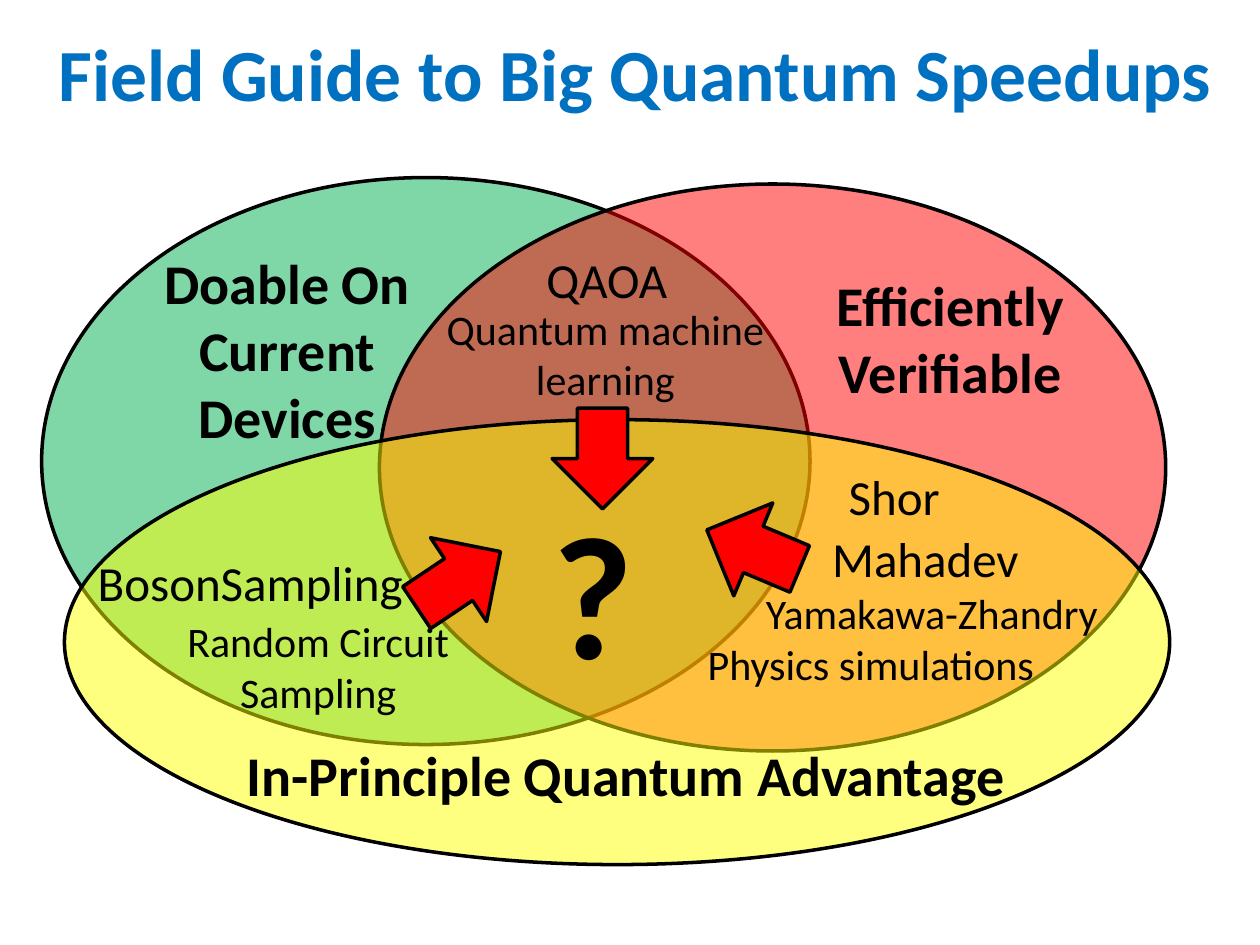
"""Build a Venn diagram slide of quantum speedups by what makes each one practical."""
from dataclasses import dataclass

from lxml.etree import SubElement
from pptx import Presentation
from pptx.dml.color import RGBColor
from pptx.enum.shapes import MSO_SHAPE
from pptx.enum.text import MSO_ANCHOR, MSO_AUTO_SIZE, PP_ALIGN
from pptx.oxml.ns import qn
from pptx.shapes.autoshape import Shape
from pptx.slide import Slide
from pptx.util import Cm, Pt


@dataclass(frozen=True)
class Theme:
    font: str = "Calibri"
    title_color: RGBColor = RGBColor(0x00, 0x70, 0xC0)
    ink: RGBColor = RGBColor(0x00, 0x00, 0x00)
    doable: RGBColor = RGBColor(0x00, 0xB0, 0x50)
    verifiable: RGBColor = RGBColor(0xFF, 0x00, 0x00)
    advantage: RGBColor = RGBColor(0xFF, 0xFF, 0x00)
    arrow: RGBColor = RGBColor(0xFF, 0x00, 0x00)
    title_size: int = 42
    heading_size: int = 32
    example_size: int = 28
    detail_size: int = 24
    question_size: int = 100
    outline: int = 2
    opacity: int = 50


THEME = Theme()


@dataclass(frozen=True)
class Region:
    left: float
    top: float
    width: float
    height: float
    color: RGBColor


@dataclass(frozen=True)
class Label:
    text: str
    left: float
    top: float
    width: float
    height: float
    size: int
    bold: bool = False
    color: RGBColor = THEME.ink


@dataclass(frozen=True)
class Arrow:
    left: float
    top: float
    rotation: float
    side: float = 2.03


TITLE = Label("Field Guide to Big Quantum Speedups", 0.64, 0.28, 24.33, 2.36,
              THEME.title_size, True, THEME.title_color)
REGIONS = [
    Region(0.84, 3.58, 15.49, 11.43, THEME.doable),
    Region(7.65, 3.71, 15.85, 11.43, THEME.verifiable),
    Region(1.3, 8.46, 22.28, 8.97, THEME.advantage),
]
LABELS = [
    Label("Doable On Current Devices", 2.08, 4.88, 7.42, 4.37, THEME.heading_size, True),
    Label("Efficiently\nVerifiable", 16.36, 5.33, 5.59, 3, THEME.heading_size, True),
    Label("In-Principle Quantum Advantage", 4.7, 14.81, 15.85, 1.63, THEME.heading_size, True),
    Label("Mahadev", 16.1, 10.52, 5.11, 1.45, THEME.example_size),
    Label("Shor", 15.47, 9.27, 5.11, 1.45, THEME.example_size),
    Label("Physics simulations", 13.67, 12.75, 7.77, 1.3, THEME.detail_size),
    Label("QAOA", 9.68, 4.9, 5.11, 1.45, THEME.example_size),
    Label("Quantum machine learning", 7.9, 5.99, 8.61, 2.31, THEME.detail_size),
    Label("BosonSampling", 1.5, 11.02, 7.09, 1.45, THEME.example_size),
    Label("Yamakawa-Zhandry", 14.48, 11.71, 8.61, 1.3, THEME.detail_size),
    Label("Random Circuit Sampling", 2.87, 12.29, 7.09, 2.31, THEME.detail_size),
    Label("?", 7.42, 9.65, 9.09, 4.52, THEME.question_size, True),
]
ARROWS = [
    Arrow(8.23, 10.67, 326.2),
    Arrow(14.17, 10.06, 202.8),
    Arrow(11.13, 8.23, 90),
]


def paint(shape: Shape, color: RGBColor) -> None:
    shape.shadow.inherit = False
    shape.fill.solid()
    shape.fill.fore_color.rgb = color
    shape.line.color.rgb = THEME.ink
    shape.line.width = Pt(THEME.outline)


def draw_region(page: Slide, region: Region) -> None:
    ellipse = page.shapes.add_shape(MSO_SHAPE.OVAL, Cm(region.left), Cm(region.top),
                                    Cm(region.width), Cm(region.height))
    paint(ellipse, region.color)
    fill_color = ellipse.element.spPr.find(qn("a:solidFill"))[0]
    SubElement(fill_color, qn("a:alpha")).set("val", str(THEME.opacity * 1000))


def draw_label(page: Slide, label: Label) -> Shape:
    box = page.shapes.add_textbox(Cm(label.left), Cm(label.top),
                                  Cm(label.width), Cm(label.height))
    frame = box.text_frame
    frame.word_wrap = True
    frame.auto_size = MSO_AUTO_SIZE.SHAPE_TO_FIT_TEXT
    frame.text = label.text
    for para in frame.paragraphs:
        para.alignment = PP_ALIGN.CENTER
        para.font.name = THEME.font
        para.font.size = Pt(label.size)
        para.font.bold = label.bold
        para.font.color.rgb = label.color
    return box


def draw_title(page: Slide, label: Label) -> None:
    frame = draw_label(page, label).text_frame
    frame.auto_size = MSO_AUTO_SIZE.NONE
    frame.vertical_anchor = MSO_ANCHOR.MIDDLE


def draw_arrow(page: Slide, arrow: Arrow) -> None:
    shape = page.shapes.add_shape(MSO_SHAPE.RIGHT_ARROW, Cm(arrow.left), Cm(arrow.top),
                                  Cm(arrow.side), Cm(arrow.side))
    shape.rotation = arrow.rotation
    paint(shape, THEME.arrow)


def main() -> None:
    deck = Presentation()
    deck.slide_width, deck.slide_height = Cm(25.4), Cm(19.05)
    page = deck.slides.add_slide(deck.slide_layouts[6])
    draw_title(page, TITLE)
    for region in REGIONS:
        draw_region(page, region)
    for label in LABELS:
        draw_label(page, label)
    for arrow in ARROWS:
        draw_arrow(page, arrow)
    deck.save("out.pptx")


if __name__ == "__main__":
    main()
